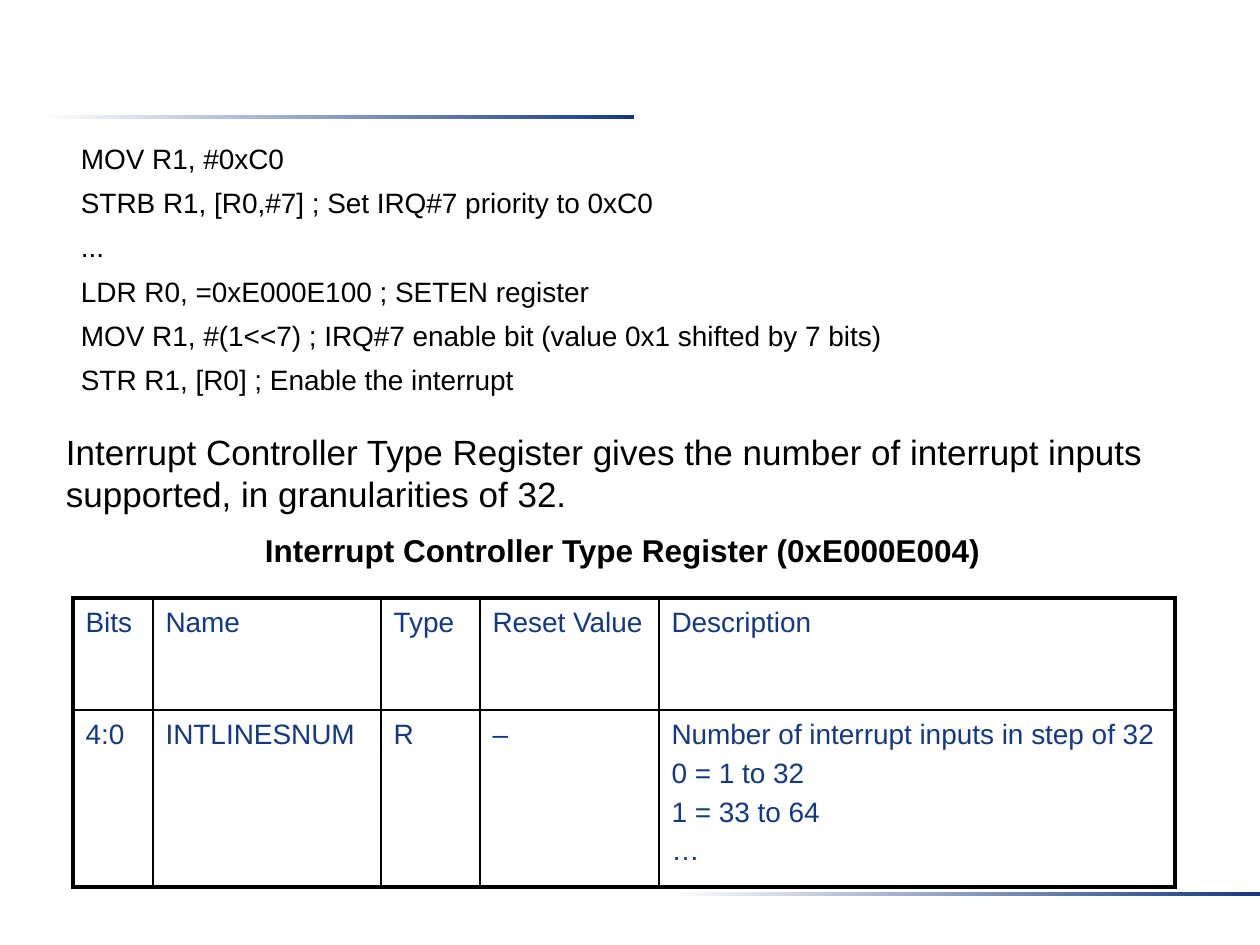
from typing import NamedTuple

from lxml import etree
from pptx import Presentation
from pptx.dml.color import RGBColor
from pptx.enum.shapes import MSO_SHAPE
from pptx.oxml.ns import qn
from pptx.util import Emu, Pt

RECT = MSO_SHAPE.RECTANGLE
PX_PER_INCH = 126
FONT = "Arial"
NAVY, BLACK, WHITE = "133984", "000000", "FFFFFF"
THIN, THICK = 1, 2.25


class Box(NamedTuple):
    x: int
    y: int
    w: int
    h: int


class TextBlock(NamedTuple):
    box: Box
    lines: list[str]
    size: int
    bold: bool = False
    wrap: bool = True
    left: int = 13
    top: int = 6
    line_spacing: float = 1.0
    gap: float = 0


RULES = [Box(39, 115, 595, 4), Box(665, 892, 595, 4)]

BLOCKS = [
    TextBlock(Box(53, 126, 1134, 273), [
        "MOV R1, #0xC0",
        "STRB R1, [R0,#7] ; Set IRQ#7 priority to 0xC0",
        "...",
        "LDR R0, =0xE000E100 ; SETEN register",
        "MOV R1, #(1<<7) ; IRQ#7 enable bit (value 0x1 shifted by 7 bits)",
        "STR R1, [R0] ; Enable the interrupt",
    ], 16, left=28, top=12, line_spacing=1.1, gap=4.2),
    TextBlock(Box(53, 420, 1131, 97), [
        "Interrupt Controller Type Register gives the number of interrupt "
        "inputs supported, in granularities of 32.",
    ], 20, top=10),
    TextBlock(Box(252, 525, 743, 50), [
        "Interrupt Controller Type Register (0xE000E004)",
    ], 18, bold=True, wrap=False),
]

TABLE_X, TABLE_Y = 73, 598
COL_WIDTHS = [80, 228, 99, 179, 516]
ROW_HEIGHTS = [112, 177]
ROWS = [
    [["Bits"], ["Name"], ["Type"], ["Reset Value"], ["Description"]],
    [["4:0"], ["INTLINESNUM"], ["R"], ["–"],
     ["Number of interrupt inputs in step of 32", "0 = 1 to 32",
      "1 = 33 to 64", "…"]],
]


def px(n: int) -> Emu:
    return Emu(round(n * 914400 / PX_PER_INCH))


def rgb(color: str) -> RGBColor:
    return RGBColor.from_string(color)


def write_lines(tf, lines: list[str], size: int, color: str, bold: bool = False,
                line_spacing: float = 1.0, gap: float = 0) -> None:
    for i, line in enumerate(lines):
        p = tf.add_paragraph() if i else tf.paragraphs[0]
        p.text = line
        p.line_spacing = line_spacing
        p.space_before = Pt(gap if i else 0)
        p.font.name, p.font.size, p.font.bold = FONT, Pt(size), bold
        p.font.color.rgb = rgb(color)


def add_rule(s, box: Box) -> None:
    sp = s.shapes.add_shape(RECT, *map(px, box))
    sp.shadow.inherit = False
    sp.line.fill.background()
    sp.fill.gradient()
    sp.fill.gradient_angle = 0
    for stop, color, position in zip(sp.fill.gradient_stops, (WHITE, NAVY), (0, 1)):
        stop.color.rgb = rgb(color)
        stop.position = position


def add_text(s, block: TextBlock) -> None:
    tf = s.shapes.add_textbox(*map(px, block.box)).text_frame
    tf.word_wrap = block.wrap
    tf.margin_left, tf.margin_top = px(block.left), px(block.top)
    write_lines(tf, block.lines, block.size, BLACK, block.bold,
                block.line_spacing, block.gap)


def set_borders(cell, widths: dict[str, float]) -> None:
    tc_pr = cell._tc.get_or_add_tcPr()
    for i, (side, width) in enumerate(widths.items()):
        ln = etree.Element(qn(f"a:{side}"), w=str(Pt(width)))
        fill = etree.SubElement(ln, qn("a:solidFill"))
        etree.SubElement(fill, qn("a:srgbClr"), val=BLACK)
        tc_pr.insert(i, ln)  # borders come before the fill


def add_register_table(s) -> None:
    n_rows, n_cols = len(ROWS), len(COL_WIDTHS)
    box = Box(TABLE_X, TABLE_Y, sum(COL_WIDTHS), sum(ROW_HEIGHTS))
    table = s.shapes.add_table(n_rows, n_cols, *map(px, box)).table
    table.first_row = table.horz_banding = False
    for col, width in zip(table.columns, COL_WIDTHS):
        col.width = px(width)
    for r, row in enumerate(ROWS):
        table.rows[r].height = px(ROW_HEIGHTS[r])
        for c, lines in enumerate(row):
            cell = table.cell(r, c)
            cell.fill.background()
            write_lines(cell.text_frame, lines, 16, NAVY, line_spacing=1.1, gap=2.6)
            # Thick frame outside, thin grid inside
            set_borders(cell, {
                "lnL": THICK if c == 0 else THIN,
                "lnR": THICK if c == n_cols - 1 else THIN,
                "lnT": THICK if r == 0 else THIN,
                "lnB": THICK if r == n_rows - 1 else THIN,
            })


def main() -> None:
    prs = Presentation()
    prs.slide_width, prs.slide_height = px(1260), px(945)
    s = prs.slides.add_slide(prs.slide_layouts[6])
    # Fading rules at top and bottom
    for box in RULES:
        add_rule(s, box)
    # Code listing, explanation and table heading
    for block in BLOCKS:
        add_text(s, block)
    add_register_table(s)
    prs.save("out.pptx")


if __name__ == "__main__":
    main()
